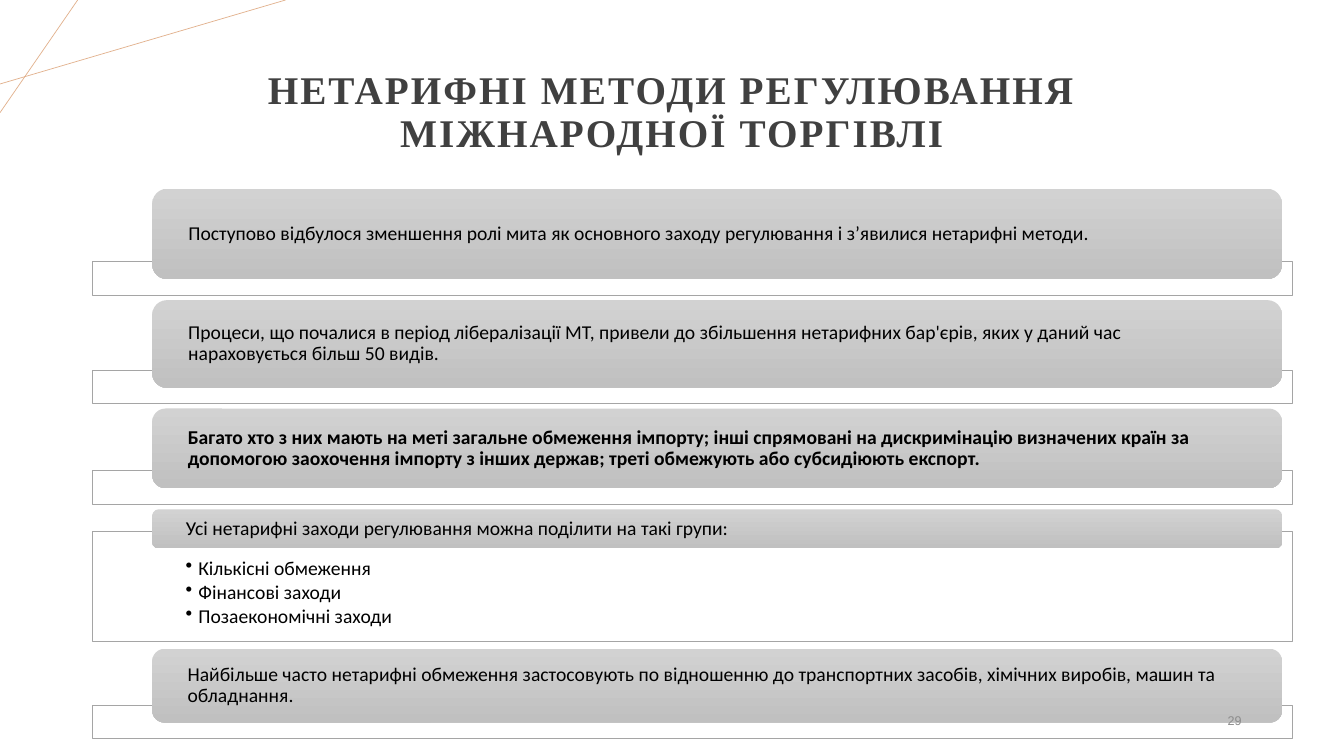
from lxml.etree import SubElement
from pptx import Presentation
from pptx.dml.color import RGBColor
from pptx.enum.shapes import MSO_CONNECTOR, MSO_SHAPE
from pptx.enum.text import MSO_ANCHOR, PP_ALIGN
from pptx.oxml.ns import qn
from pptx.util import Pt

COLORS = {
    "white": "FFFFFF",
    "black": "000000",
    "title": "404040",
    "number": "8C8C8C",
    "border": "A5A5A5",
    "ray": "E2B18D",
    "panel_top": "D2D2D2",
    "panel_bottom": "C0C0C0",
}

PANEL_LEFT, PANEL_WIDTH = 108.7, 807.1
FRAME_LEFT, FRAME_WIDTH, FRAME_HEIGHT = 66.2, 856.8, 23.8
OVERLAP = 12.5

SECTIONS = [
    (134.8, 64.6, "Поступово відбулося зменшення ролі мита як основного заходу регулювання "
                  "і з’явилися нетарифні методи.", [], False),
    (214.4, 62.6, "Процеси, що почалися в період лібералізації МТ, привели до збільшення "
                  "нетарифних бар'єрів, яких у даний час нараховується більш 50 видів.", [], False),
    (291.8, 56.9, "Багато хто з них мають на меті загальне обмеження імпорту; інші спрямовані "
                  "на дискримінацію визначених країн за допомогою заохочення імпорту з інших "
                  "держав; треті обмежують або субсидіюють експорт.", [], True),
    (363.8, 28, "Усі нетарифні заходи регулювання можна поділити на такі групи:",
     ["Кількісні обмеження", "Фінансові заходи", "Позаекономічні заходи"], False),
    (463.5, 52.6, "Найбільше часто нетарифні обмеження застосовують по відношенню до "
                  "транспортних засобів, хімічних виробів, машин та обладнання.", [], False),
]


def color(name):
    return RGBColor.from_string(COLORS[name])


def write(holder, lines, size=14, font="Calibri", ink="black", bold=False,
          align=PP_ALIGN.LEFT, anchor=MSO_ANCHOR.MIDDLE, margins=(7.2, 3.6, 7.2, 3.6),
          line_spacing=0.9, after=0, tracking=0, bullet_indent=0):
    body = holder.text_frame
    body.word_wrap = True
    body.vertical_anchor = anchor
    body.margin_left, body.margin_top, body.margin_right, body.margin_bottom = map(Pt, margins)
    for index, line in enumerate(lines):
        paragraph = body.paragraphs[0] if index == 0 else body.add_paragraph()
        paragraph.alignment = align
        paragraph.line_spacing = line_spacing
        paragraph.space_after = Pt(after)
        run = paragraph.add_run()
        run.text = line
        run.font.size = Pt(size)
        run.font.name = font
        run.font.bold = bold
        run.font.color.rgb = color(ink)
        if tracking:
            run.font._element.set("spc", str(int(tracking * 100)))
        if bullet_indent:
            properties = paragraph._p.get_or_add_pPr()
            properties.set("marL", str(Pt(bullet_indent)))
            properties.set("indent", str(-Pt(bullet_indent)))
            SubElement(properties, qn("a:buChar"), char="•")


def add_ray(slide, x1, y1, x2, y2):
    ray = slide.shapes.add_connector(MSO_CONNECTOR.STRAIGHT, Pt(x1), Pt(y1), Pt(x2), Pt(y2))
    ray.line.color.rgb = color("ray")
    ray.line.width = Pt(0.5)
    SubElement(ray._element.spPr, qn("a:effectLst"))


def add_frame(slide, top, height):
    frame = slide.shapes.add_shape(MSO_SHAPE.RECTANGLE, Pt(FRAME_LEFT), Pt(top),
                                   Pt(FRAME_WIDTH), Pt(height))
    frame.shadow.inherit = False
    frame.fill.solid()
    frame.fill.fore_color.rgb = color("white")
    white = frame._element.spPr.find(qn("a:solidFill")).find(qn("a:srgbClr"))
    SubElement(white, qn("a:alpha"), val="90000")
    frame.line.color.rgb = color("border")
    frame.line.width = Pt(0.5)
    return frame


def add_panel(slide, top, height):
    panel = slide.shapes.add_shape(MSO_SHAPE.ROUNDED_RECTANGLE, Pt(PANEL_LEFT), Pt(top),
                                   Pt(PANEL_WIDTH), Pt(height))
    panel.shadow.inherit = False
    panel.fill.gradient()
    panel.fill.gradient_angle = 270
    for stop, position, name in zip(panel.fill.gradient_stops, (0, 1),
                                    ("panel_top", "panel_bottom")):
        stop.position = position
        stop.color.rgb = color(name)
    panel.line.fill.background()
    return panel


def add_section(slide, top, height, statement, groups, bold):
    frame = add_frame(slide, top + height - OVERLAP, 79.2 if groups else FRAME_HEIGHT)
    if groups:
        write(frame, groups, anchor=MSO_ANCHOR.TOP, margins=(66.5, 19.5, 66.5, 7.9),
              after=2.1, bullet_indent=9)
    panel = add_panel(slide, top, height)
    write(panel, [statement], bold=bold, margins=(22.7, 0, 22.7, 0), after=4.9)


def add_label(slide, left, top, width, height, text, **text_format):
    label = slide.shapes.add_textbox(Pt(left), Pt(top), Pt(width), Pt(height))
    write(label, [text], **text_format)


def main():
    deck = Presentation()
    deck.slide_width, deck.slide_height = Pt(960), Pt(540)
    slide = deck.slides.add_slide(deck.slide_layouts[6])
    add_ray(slide, 0, 60, 204, 0)
    add_ray(slide, 55.5, 0, 0, 80.5)
    for section in SECTIONS:
        add_section(slide, *section)
    add_label(slide, 66, 28.8, 828, 104.4, "НЕТАРИФНІ МЕТОДИ РЕГУЛЮВАННЯ МІЖНАРОДНОЇ ТОРГІВЛІ",
              size=28, font="Times New Roman", ink="title", bold=True,
              align=PP_ALIGN.CENTER, tracking=1.5)
    add_label(slide, 678, 500.5, 216, 28.8, "29", size=9, font="Arial", ink="number",
              align=PP_ALIGN.RIGHT, line_spacing=1)
    deck.save("out.pptx")


if __name__ == "__main__":
    main()
